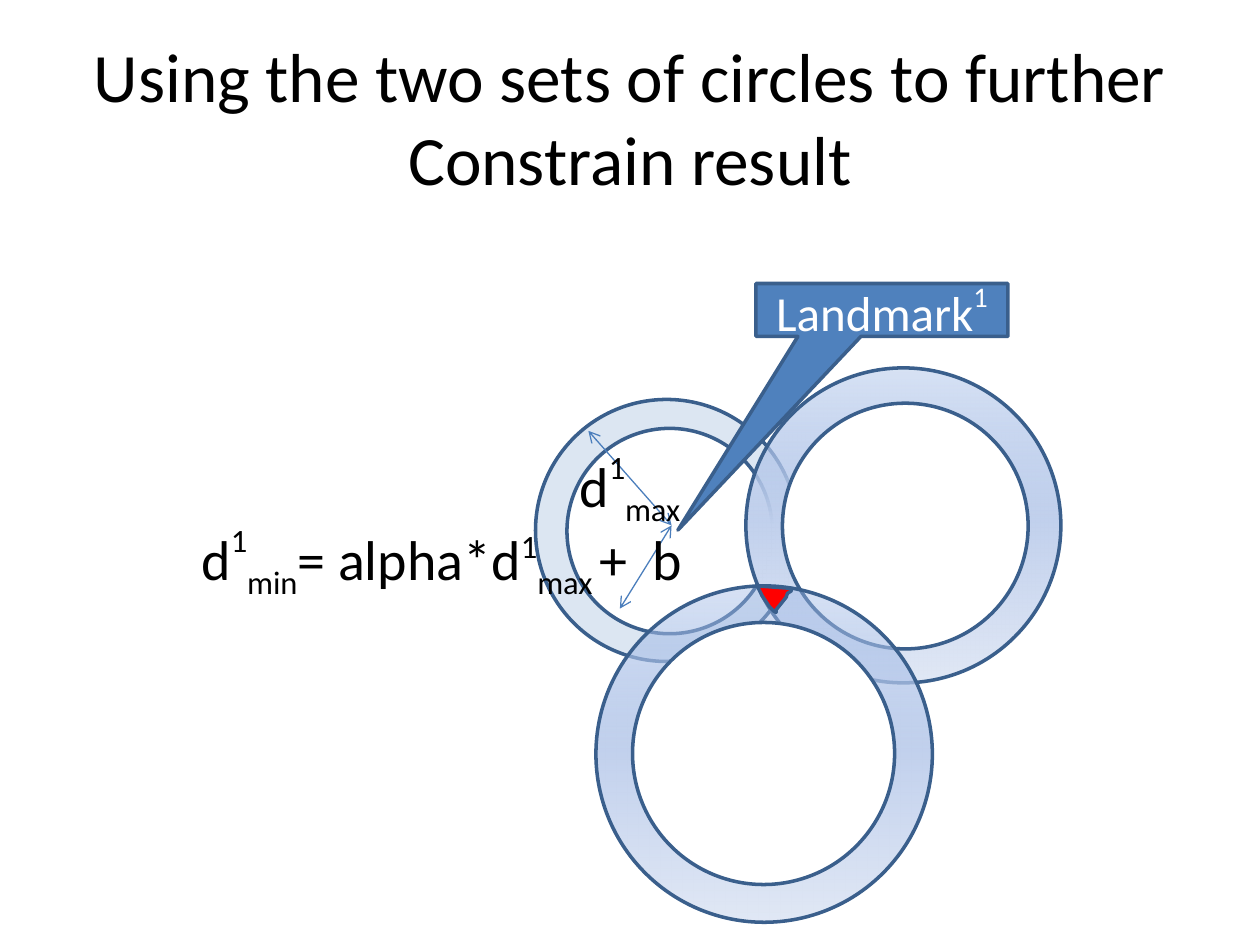
from pptx import Presentation
from pptx.dml.color import RGBColor
from pptx.enum.shapes import MSO_CONNECTOR, MSO_SHAPE
from pptx.enum.text import MSO_ANCHOR, MSO_AUTO_SIZE, PP_ALIGN
from pptx.oxml import parse_xml
from pptx.oxml.ns import nsdecls, qn
from pptx.util import Inches, Pt

CIRCLE, CALLOUT = MSO_SHAPE.FLOWCHART_CONNECTOR, MSO_SHAPE.RECTANGULAR_CALLOUT
STRAIGHT = MSO_CONNECTOR.STRAIGHT
MIDDLE, TOP = MSO_ANCHOR.MIDDLE, MSO_ANCHOR.TOP
LEFT, CENTER = PP_ALIGN.LEFT, PP_ALIGN.CENTER
FIT_SHAPE = MSO_AUTO_SIZE.SHAPE_TO_FIT_TEXT

THEME = {
    "font": "Calibri",
    "title": 39.6, "formula": 32, "label": 28,
    "black": "000000", "white": "FFFFFF", "outline": "3A5F8C",
    "arrow": "4B7EBC", "callout": "4F81BD", "overlap": "FF0000", "pale": "DCE6F2",
    "ring": [(0, "9AB5E4", 38), (50, "C2D1ED", 100), (100, "E1E8F5", 100)],
}


def paint(sp, color):
    sp.shadow.inherit = False
    sp.fill.solid()
    sp.fill.fore_color.rgb = RGBColor.from_string(color)
    sp.line.color.rgb = RGBColor.from_string(THEME["outline"])
    sp.line.width = Pt(2)


def write(sp, runs, size, color, align, frame):
    tf = sp.text_frame
    for name, value in frame.items():
        setattr(tf, name, value)
    p = tf.paragraphs[0]
    p.alignment = align
    look = {"name": THEME["font"], "size": Pt(size)}
    for text, baseline in runs:
        r = p.add_run()
        r.text = text
        for name, value in look.items():
            setattr(r.font, name, value)
        r.font.color.rgb = RGBColor.from_string(color)
        if baseline:
            r._r.get_or_add_rPr().set("baseline", str(baseline * 1000))


prs = Presentation()
prs.slide_width, prs.slide_height = Inches(10), Inches(7.5)
s = prs.slides.add_slide(prs.slide_layouts[6])

title = s.shapes.add_textbox(Inches(0.5), Inches(0.3), Inches(9), Inches(1.25))
write(title, [("Using the two sets of circles to further Constrain result", 0)],
      THEME["title"], THEME["black"], CENTER,
      {"word_wrap": True, "vertical_anchor": MIDDLE})

rings = [
    ((4.25, 3.17, 2.08), (4.5, 3.4, 1.63), False, True),
    ((5.92, 2.92, 2.5), (6.21, 3.2, 1.95), True, True),
    ((4.73, 4.65, 2.67), (5.02, 4.94, 2.08), True, False),
]
stops = "".join(
    f'<a:gs pos="{pos * 1000}"><a:srgbClr val="{color}">'
    f'<a:alpha val="{alpha * 1000}"/></a:srgbClr></a:gs>'
    for pos, color, alpha in THEME["ring"])
gradient = (f'<a:gradFill {nsdecls("a")} rotWithShape="1"><a:gsLst>{stops}</a:gsLst>'
            '<a:lin ang="5400000" scaled="0"/></a:gradFill>')
for outer, inner, shaded, grouped in rings:
    shapes = s.shapes.add_group_shape().shapes if grouped else s.shapes
    for (x, y, d), color in ((outer, THEME["pale"]), (inner, THEME["white"])):
        sp = shapes.add_shape(CIRCLE, Inches(x), Inches(y), Inches(d), Inches(d))
        paint(sp, color)
        if shaded and color == THEME["pale"]:
            spPr = sp._element.spPr
            spPr.replace(spPr.find(qn("a:solidFill")), parse_xml(gradient))

overlap = [(6.01, 4.65), (6.05, 4.73), (6.09, 4.79), (6.11, 4.82), (6.14, 4.85),
           (6.16, 4.86), (6.16, 4.84), (6.2, 4.79), (6.24, 4.74), (6.25, 4.71),
           (6.28, 4.69), (6.28, 4.67)]
points = [(Inches(x), Inches(y)) for x, y in overlap]
builder = s.shapes.build_freeform(*points[0])
builder.add_line_segments(points[1:], close=True)
paint(builder.convert_to_shape(), THEME["overlap"])

center = (5.33, 4.17)
for start, end in (((4.67, 3.42), center), (center, (4.92, 4.83))):
    arrow = s.shapes.add_connector(STRAIGHT, *map(Inches, start + end))
    arrow.line.color.rgb = RGBColor.from_string(THEME["arrow"])
    arrow.line.width = Pt(0.75)
    ln = arrow.line._get_or_add_ln()
    for tag in ("headEnd", "tailEnd"):
        ln.append(parse_xml(f'<a:{tag} {nsdecls("a")} type="arrow"/>'))
    arrow._element.spPr.append(parse_xml(f'<a:effectLst {nsdecls("a")}/>'))

formulas = [
    (4.5, 3.5, 1.1, [("d", 0), ("1", 50), ("max", -25)]),
    (1.5, 4.08, 4.32, [("d", 0), ("1", 50), ("min", -25), ("= alpha*d", 0),
                       ("1", 40), ("max ", -25), ("+  b", 0)]),
]
for x, y, width, runs in formulas:
    sp = s.shapes.add_textbox(Inches(x), Inches(y), Inches(width), Inches(0.64))
    write(sp, runs, THEME["formula"], THEME["black"], LEFT,
          {"word_wrap": False, "auto_size": FIT_SHAPE, "vertical_anchor": TOP})

landmark = s.shapes.add_shape(CALLOUT, Inches(6), Inches(2.25), Inches(2), Inches(0.42))
landmark.adjustments[0], landmark.adjustments[1] = -0.81, 4.16
paint(landmark, THEME["callout"])
write(landmark, [("Landmark", 0), ("1", 50)], THEME["label"], THEME["white"], CENTER,
      {"word_wrap": True, "vertical_anchor": MIDDLE})

prs.save("out.pptx")
